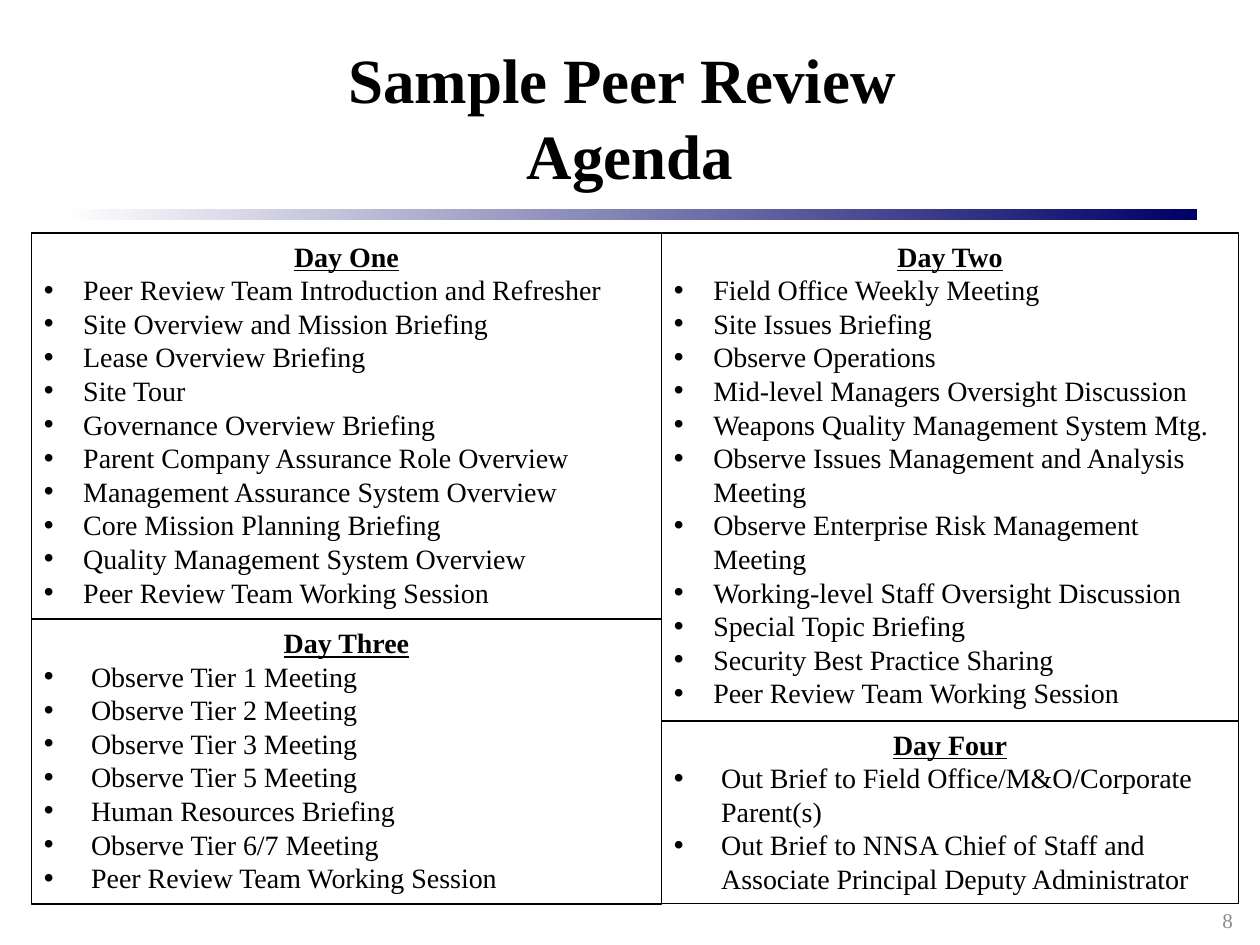
import pptx
import pptx.util
import pptx.dml.color
import pptx.enum.shapes
import pptx.enum.text
import pptx.oxml.ns
import lxml.etree

Pt = pptx.util.Pt
RGBColor = pptx.dml.color.RGBColor
ALIGN = pptx.enum.text.PP_ALIGN
ANCHOR = pptx.enum.text.MSO_ANCHOR
RECTANGLE = pptx.enum.shapes.MSO_SHAPE.RECTANGLE

BLACK = RGBColor(0x00, 0x00, 0x00)
WHITE = RGBColor(0xFF, 0xFF, 0xFF)
NAVY = RGBColor(0x00, 0x00, 0x66)
GRAY = RGBColor(0x8C, 0x8C, 0x8C)
FONT = "Times New Roman"

LEFT, MIDDLE, TOP = 18, 378, 133.2
LEFT_WIDTH, RIGHT_WIDTH = 360, 329.76

agenda = [
    ("Day One", LEFT, TOP, LEFT_WIDTH, 220.6, 22.5, [
        "Peer Review Team Introduction and Refresher",
        "Site Overview and Mission Briefing",
        "Lease Overview Briefing",
        "Site Tour",
        "Governance Overview Briefing",
        "Parent Company Assurance Role Overview",
        "Management Assurance System Overview",
        "Core Mission Planning Briefing",
        "Quality Management System Overview",
        "Peer Review Team Working Session",
    ]),
    ("Day Two", MIDDLE, TOP, RIGHT_WIDTH, 278.6, 22.5, [
        "Field Office Weekly Meeting",
        "Site Issues Briefing",
        "Observe Operations",
        "Mid-level Managers Oversight Discussion",
        "Weapons Quality Management System Mtg.",
        "Observe Issues Management and Analysis Meeting",
        "Observe Enterprise Risk Management Meeting",
        "Working-level Staff Oversight Discussion",
        "Special Topic Briefing",
        "Security Best Practice Sharing",
        "Peer Review Team Working Session",
    ]),
    ("Day Three", LEFT, 354, LEFT_WIDTH, 162.6, 27, [
        "Observe Tier 1 Meeting",
        "Observe Tier 2 Meeting",
        "Observe Tier 3 Meeting",
        "Observe Tier 5 Meeting",
        "Human Resources Briefing",
        "Observe Tier 6/7 Meeting",
        "Peer Review Team Working Session",
    ]),
    ("Day Four", MIDDLE, 412, RIGHT_WIDTH, 104.4, 27, [
        "Out Brief to Field Office/M&O/Corporate Parent(s)",
        "Out Brief to NNSA Chief of Staff and Associate Principal Deputy Administrator",
    ]),
]


def add_span(para, text, size, color=BLACK, bold=False, underline=False):
    span = para.add_run()
    span.text = text
    span.font.name = FONT
    span.font.size = Pt(size)
    span.font.color.rgb = color
    span.font.bold = bold
    span.font.underline = underline


def add_bullet(para, indent):
    props = para._p.get_or_add_pPr()
    props.set("marL", str(Pt(indent)))
    props.set("indent", str(Pt(-indent)))
    font = lxml.etree.SubElement(props, pptx.oxml.ns.qn("a:buFont"))
    font.set("typeface", "Arial")
    bullet = lxml.etree.SubElement(props, pptx.oxml.ns.qn("a:buChar"))
    bullet.set("char", "•")


deck = pptx.Presentation()
deck.slide_width = Pt(720)
deck.slide_height = Pt(540)
page = deck.slides.add_slide(deck.slide_layouts[5])

rule = page.shapes.add_shape(RECTANGLE, Pt(36), Pt(119.5), Pt(648), Pt(6.5))
rule.shadow.inherit = False
rule.line.fill.background()
rule.fill.gradient()
rule.fill.gradient_angle = 0
for stop, position, color in zip(rule.fill.gradient_stops, (0, 1), (WHITE, NAVY)):
    stop.position = position
    stop.color.rgb = color

title = page.shapes.title
title.left, title.top, title.width, title.height = Pt(36), Pt(21.6), Pt(648), Pt(90)
frame = title.text_frame
frame.auto_size = pptx.enum.text.MSO_AUTO_SIZE.NONE
frame.vertical_anchor = ANCHOR.MIDDLE
for para, text in ((frame.paragraphs[0], "Sample Peer Review "), (frame.add_paragraph(), "Agenda")):
    para.alignment = ALIGN.CENTER
    para.space_before = Pt(0)
    add_span(para, text, 36, bold=True)

for day, left, top, width, height, indent, items in agenda:
    box = page.shapes.add_shape(RECTANGLE, Pt(left), Pt(top), Pt(width), Pt(height))
    box.shadow.inherit = False
    box.fill.background()
    box.line.color.rgb = BLACK
    box.line.width = Pt(0.75)
    frame = box.text_frame
    frame.word_wrap = True
    frame.auto_size = pptx.enum.text.MSO_AUTO_SIZE.SHAPE_TO_FIT_TEXT
    frame.vertical_anchor = ANCHOR.TOP
    heading = frame.paragraphs[0]
    heading.alignment = ALIGN.CENTER
    add_span(heading, day, 16, bold=True, underline=True)
    for item in items:
        para = frame.add_paragraph()
        para.alignment = ALIGN.LEFT
        add_bullet(para, indent)
        add_span(para, item, 16)

number = page.shapes.add_textbox(Pt(543.6), Pt(511.2), Pt(168), Pt(28.8))
number.text_frame.word_wrap = True
number.text_frame.vertical_anchor = ANCHOR.MIDDLE
para = number.text_frame.paragraphs[0]
para.alignment = ALIGN.RIGHT
add_span(para, "8", 12, GRAY)

deck.save("out.pptx")
